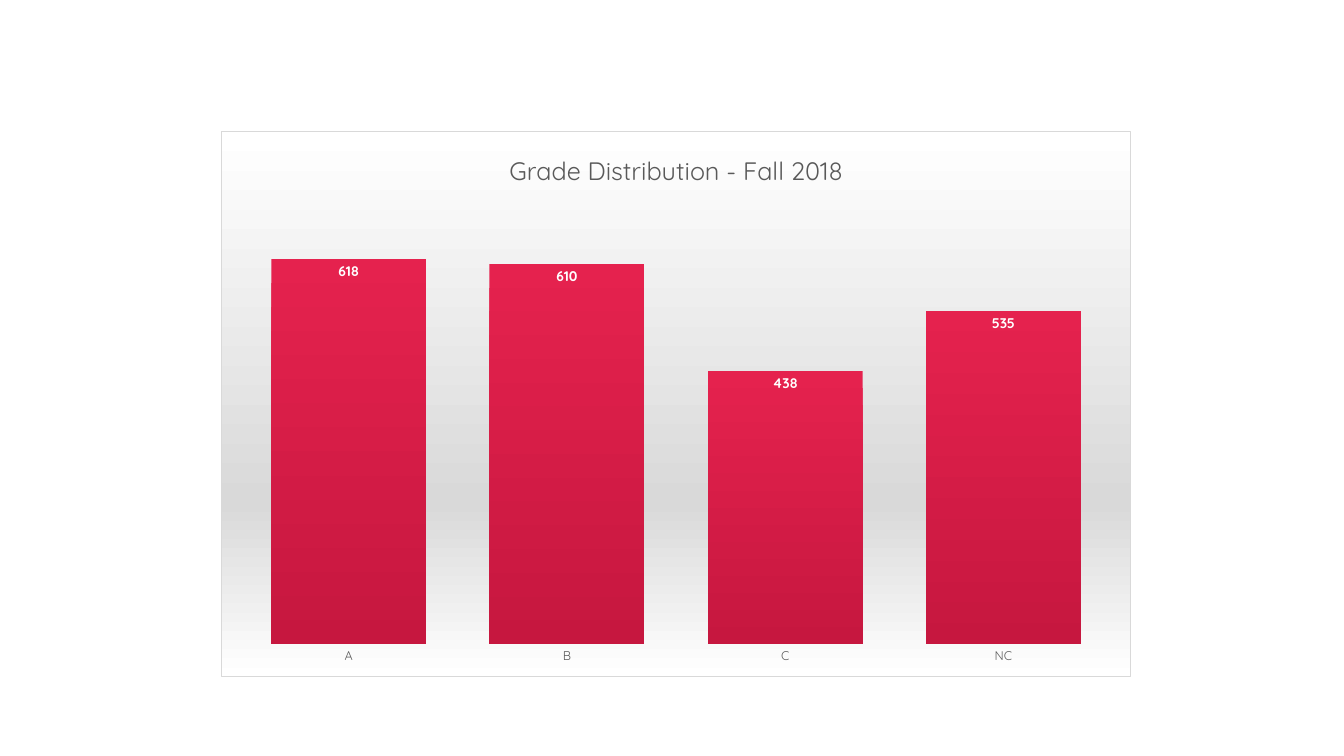
from dataclasses import dataclass

from pptx import Presentation
from pptx.chart.data import CategoryChartData
from pptx.dml.color import RGBColor as RGB
from pptx.enum.chart import XL_CHART_TYPE as CT, XL_LABEL_POSITION as LP, XL_TICK_MARK as TM
from pptx.oxml import parse_xml
from pptx.oxml.ns import nsdecls, qn
from pptx.util import Inches, Pt


@dataclass(frozen=True)
class Theme:
    font: str = "Quicksand"
    text: str = "595959"
    white: str = "FFFFFF"
    border: str = "D9D9D9"
    bar: tuple = ("E5224E", "C6173F")
    panel: tuple = ((0, "FFFFFF"), (68, "D9D9D9"), (100, "FFFFFF"))
    title_size: float = 18
    label_size: float = 10
    axis_size: float = 9


class SlideBuilder:
    """Adds styled elements to the current slide."""

    def __init__(self, prs, theme):
        self.theme = theme
        self.slide = prs.slides.add_slide(prs.slide_layouts[6])

    def style(self, font, size, color, bold=False):
        for name, value in {"name": self.theme.font, "size": Pt(size), "bold": bold}.items():
            setattr(font, name, value)
        font.color.rgb = RGB.from_string(color)

    def panel(self, chart):
        stops = "".join(
            f'<a:gs pos="{pos * 1000}"><a:srgbClr val="{color}"/></a:gs>'
            for pos, color in self.theme.panel
        )
        sp_pr = parse_xml(
            f'<c:spPr {nsdecls("c", "a")}><a:gradFill><a:gsLst>{stops}</a:gsLst>'
            f'<a:lin ang="5400000" scaled="0"/></a:gradFill><a:ln w="{Pt(0.75)}">'
            f'<a:solidFill><a:srgbClr val="{self.theme.border}"/></a:solidFill></a:ln></c:spPr>'
        )
        chart.element.find(qn("c:chart")).addnext(sp_pr)

    def plot_layout(self, chart, **box):
        area = chart.element.find(f'{qn("c:chart")}/{qn("c:plotArea")}')
        for old in area.findall(qn("c:layout")):
            area.remove(old)
        sizes = "".join(f'<c:{k} val="{v}"/>' for k, v in box.items())
        area.insert(0, parse_xml(
            f'<c:layout {nsdecls("c")}><c:manualLayout><c:layoutTarget val="inner"/>'
            f'<c:xMode val="edge"/><c:yMode val="edge"/>{sizes}</c:manualLayout></c:layout>'
        ))

    def column_chart(self, title, values, left, top, width, height):
        t = self.theme
        data = CategoryChartData()
        data.categories = list(values)
        data.add_series("Series 1", list(values.values()))
        chart = self.slide.shapes.add_chart(
            CT.COLUMN_CLUSTERED, Inches(left), Inches(top), Inches(width), Inches(height), data
        ).chart
        chart.has_legend = False
        self.style(chart.font, t.label_size, t.text)
        self.panel(chart)
        self.plot_layout(chart, x=0.02, y=0.14, w=0.96, h=0.8)

        chart.has_title = True
        chart.chart_title.include_in_layout = False
        p = chart.chart_title.text_frame.paragraphs[0]
        r = p.add_run()
        r.text = title
        self.style(r.font, t.title_size, t.text)

        x_axis, y_axis = chart.category_axis, chart.value_axis
        x_axis.major_tick_mark = TM.NONE
        x_axis.format.line.fill.background()
        self.style(x_axis.tick_labels.font, t.axis_size, t.text)
        for name, value in {
            "minimum_scale": 0, "maximum_scale": 700,
            "has_major_gridlines": False, "visible": False,
        }.items():
            setattr(y_axis, name, value)

        plot = chart.plots[0]
        plot.gap_width = 41
        plot.vary_by_categories = False
        series = plot.series[0]
        fill = series.format.fill
        fill.gradient()
        fill.gradient_angle = 270
        for stop, color in zip(fill.gradient_stops, t.bar):
            stop.color.rgb = RGB.from_string(color)
        labels = series.data_labels
        labels.show_value = True
        labels.position = LP.INSIDE_END
        self.style(labels.font, t.label_size, t.white, bold=True)


def main():
    prs = Presentation()
    prs.slide_width, prs.slide_height = Inches(13.33), Inches(7.5)
    s = SlideBuilder(prs, Theme())
    grades = {"A": 618, "B": 610, "C": 438, "NC": 535}
    s.column_chart("Grade Distribution - Fall 2018", grades, 2.19, 1.3, 9.03, 5.42)
    prs.save("out.pptx")


if __name__ == "__main__":
    main()
